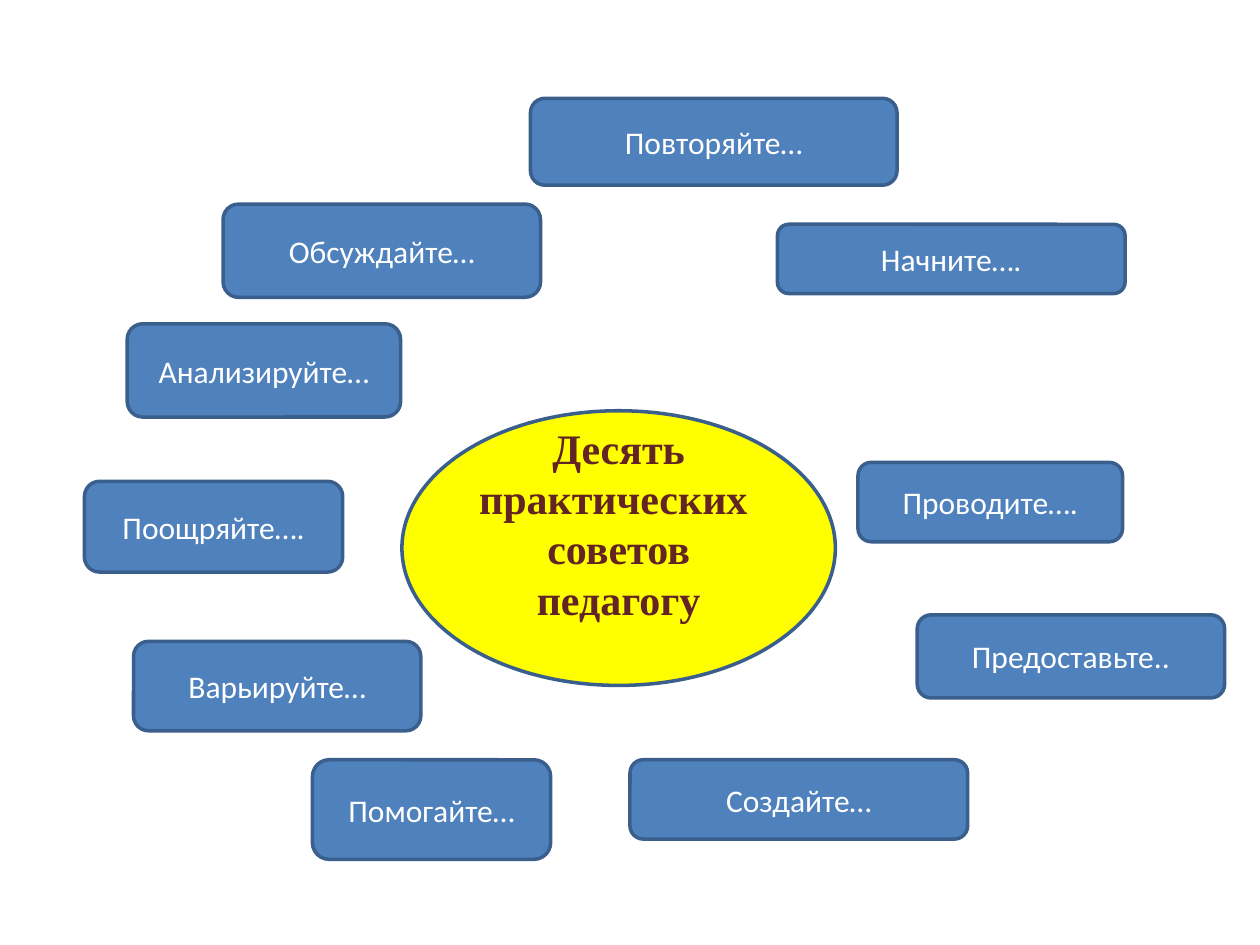
from dataclasses import dataclass

from pptx import Presentation
from pptx.dml.color import RGBColor
from pptx.enum.shapes import MSO_SHAPE
from pptx.enum.text import MSO_ANCHOR, PP_ALIGN
from pptx.shapes.autoshape import Shape
from pptx.slide import Slide
from pptx.util import Inches, Length, Pt

# The slide is a grid of 100 columns by 75 rows of square cells
COLUMNS, ROWS = 100, 75
CELL = 0.1
OUTLINE = "3A5F8C"


@dataclass(frozen=True)
class Style:
    form: MSO_SHAPE
    fill: str
    font: str
    size: int
    color: str
    bold: bool = False


@dataclass(frozen=True)
class Bubble:
    """A filled shape with text, placed in grid cells."""
    column: float
    row: float
    width: float
    height: float
    lines: tuple[str, ...]


TOPIC_STYLE = Style(MSO_SHAPE.OVAL, "FFFF00", "Times New Roman", 24, "632523", True)
ADVICE_STYLE = Style(MSO_SHAPE.ROUNDED_RECTANGLE, "4F81BD", "Calibri", 18, "FFFFFF")

TOPIC = Bubble(31.9, 32.6, 34.4, 21.8, ("Десять практических ", "советов педагогу"))

# Clockwise from the upper right
ADVICE = (
    Bubble(61.7, 17.8, 27.6, 5.5, ("Начните….",)),
    Bubble(68.1, 36.7, 21.0, 6.3, ("Проводите….",)),
    Bubble(72.8, 48.8, 24.4, 6.6, ("Предоставьте..",)),
    Bubble(50.0, 60.3, 26.8, 6.3, ("Создайте…",)),
    Bubble(24.8, 60.3, 18.9, 7.9, ("Помогайте…",)),
    Bubble(10.6, 50.9, 22.8, 7.1, ("Варьируйте…",)),
    Bubble(6.7, 38.2, 20.5, 7.2, ("Поощряйте….",)),
    Bubble(10.1, 25.7, 21.7, 7.4, ("Анализируйте…",)),
    Bubble(17.7, 16.2, 25.2, 7.4, ("Обсуждайте…",)),
    Bubble(42.1, 7.8, 29.1, 6.9, ("Повторяйте…",)),
)


def cells(count: float) -> Length:
    return Inches(count * CELL)


def color(value: str) -> RGBColor:
    return RGBColor.from_string(value)


def draw_bubble(page: Slide, bubble: Bubble, style: Style) -> Shape:
    box = page.shapes.add_shape(
        style.form, cells(bubble.column), cells(bubble.row),
        cells(bubble.width), cells(bubble.height))
    box.shadow.inherit = False
    box.fill.solid()
    box.fill.fore_color.rgb = color(style.fill)
    box.line.color.rgb = color(OUTLINE)
    box.line.width = Pt(2)

    frame = box.text_frame
    frame.word_wrap = True
    frame.vertical_anchor = MSO_ANCHOR.MIDDLE
    for index, line in enumerate(bubble.lines):
        para = frame.add_paragraph() if index else frame.paragraphs[0]
        para.alignment = PP_ALIGN.CENTER
        span = para.add_run()
        span.text = line
        span.font.name = style.font
        span.font.size = Pt(style.size)
        span.font.bold = style.bold
        span.font.color.rgb = color(style.color)
    return box


def main() -> None:
    deck = Presentation()
    deck.slide_width, deck.slide_height = cells(COLUMNS), cells(ROWS)
    page = deck.slides.add_slide(deck.slide_layouts[6])

    # Central topic, its text raised by a deeper bottom margin
    topic = draw_bubble(page, TOPIC, TOPIC_STYLE)
    topic.text_frame.margin_bottom = cells(4.5)

    # Pieces of advice around it
    for bubble in ADVICE:
        draw_bubble(page, bubble, ADVICE_STYLE)

    deck.save("out.pptx")


if __name__ == "__main__":
    main()
